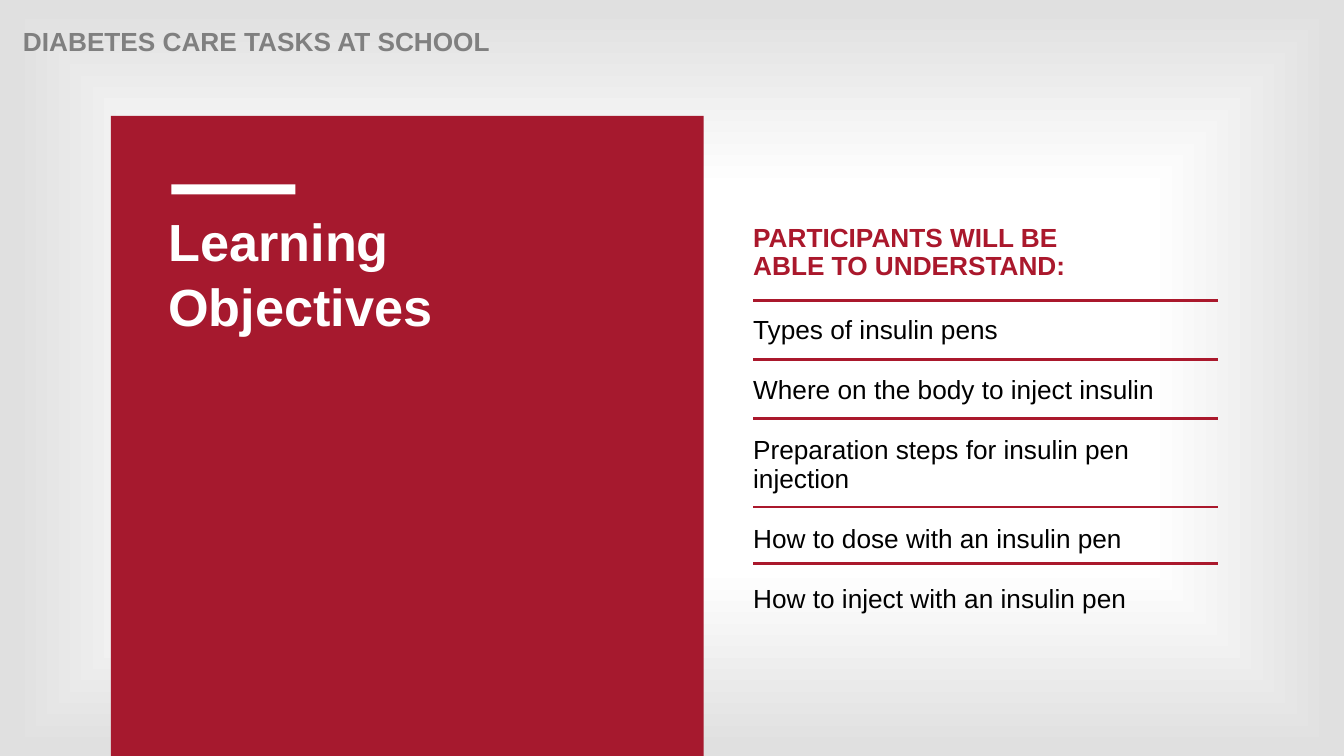
from lxml.etree import SubElement
from pptx import Presentation
from pptx.dml.color import RGBColor
from pptx.enum.shapes import MSO_CONNECTOR, MSO_SHAPE
from pptx.enum.text import MSO_ANCHOR, MSO_AUTO_SIZE, PP_ALIGN
from pptx.oxml.ns import qn
from pptx.util import Inches, Pt

CRIMSON = RGBColor(0xA6, 0x19, 0x2E)
RED = RGBColor(0xAA, 0x18, 0x2C)
GRAY = RGBColor(0x80, 0x80, 0x80)
WHITE = RGBColor(0xFF, 0xFF, 0xFF)
BLACK = RGBColor(0, 0, 0)
SILVER = RGBColor(0xE0, 0xE0, 0xE0)

BACKDROP_STOPS = [(12, WHITE), (50, WHITE), (98, SILVER)]
COURSE = "DIABETES CARE TASKS AT SCHOOL"
TITLE = "Learning Objectives"
LEAD_IN = "PARTICIPANTS WILL BE \nABLE TO UNDERSTAND:"
OBJECTIVES = [
    ("Types of insulin pens", 2.98),
    ("Where on the body to inject insulin", 3.57),
    ("Preparation steps for insulin pen injection", 4.15),
    ("How to dose with an insulin pen", 5.03),
    ("How to inject with an insulin pen", 5.59),
]
BLOCKS = [((1.1, 1.15, 5.88, 6.35), CRIMSON), ((1.7, 1.83, 1.23, 0.1), WHITE)]

LIST_LEFT, LIST_WIDTH = 7.47, 4.61
COURSE_FONT = {"name": "Arial", "size": Pt(18.7), "bold": True}
OBJECTIVE_FONT = {**COURSE_FONT, "bold": False}
TITLE_FONT = {**COURSE_FONT, "size": Pt(37.3)}
TIGHT = {"line_spacing": 0.9, "space_before": Pt(0)}
SPREAD = {**TIGHT, "space_before": Pt(1), "space_after": Pt(21.9)}
FLUSH = {f"margin_{side}": 0 for side in ("left", "top", "right", "bottom")}


def apply(target, values):
    """Set each named format value on the target."""
    for name, value in values.items():
        setattr(target, name, value)


def write(holder, lines, font, color, spacing, margins):
    """Fill a text holder with evenly formatted paragraphs."""
    frame = holder.text_frame
    apply(frame, {"word_wrap": True, "auto_size": MSO_AUTO_SIZE.NONE,
                  "vertical_anchor": MSO_ANCHOR.TOP, **margins})
    for index, line in enumerate(lines):
        paragraph = frame.add_paragraph() if index else frame.paragraphs[0]
        paragraph.text = line
        apply(paragraph, {"alignment": PP_ALIGN.LEFT, **spacing})
        for run in paragraph.runs:
            apply(run.font, font)
            run.font.color.rgb = color


def paint_backdrop(slide):
    """Give the slide a gradient that darkens toward its edges."""
    slide.background.fill.gradient()
    gradient = next(slide.element.iter(qn("a:gradFill")))
    for child in list(gradient):
        gradient.remove(child)
    stops = SubElement(gradient, qn("a:gsLst"))
    for percent, color in BACKDROP_STOPS:
        stop = SubElement(stops, qn("a:gs"), pos=str(percent * 1000))
        SubElement(stop, qn("a:srgbClr"), val=str(color))
    outline = SubElement(gradient, qn("a:path"), {"path": "shape"})
    SubElement(outline, qn("a:fillToRect"), dict.fromkeys("ltrb", "50000"))


def add_text(slide, box, *content):
    """Add a text box at the given place."""
    write(slide.shapes.add_textbox(*map(Inches, box)), *content)


def main():
    """Build the learning objectives slide."""
    deck = Presentation()
    apply(deck, {"slide_width": Inches(13.33), "slide_height": Inches(7.5)})
    slide = deck.slides.add_slide(deck.slide_layouts[5])
    shapes = slide.shapes
    paint_backdrop(slide)

    for box, color in BLOCKS:
        block = shapes.add_shape(MSO_SHAPE.RECTANGLE, *map(Inches, box))
        block.shadow.inherit = False
        block.fill.solid()
        block.fill.fore_color.rgb = color
        block.line.fill.background()

    add_text(slide, (0.13, 0.24, 11, 0.28), [COURSE], COURSE_FONT, GRAY, TIGHT, {})
    add_text(slide, (LIST_LEFT, 2.23, LIST_WIDTH, 0.6), [LEAD_IN],
             COURSE_FONT, RED, TIGHT, FLUSH)

    title = shapes.title
    apply(title, {"left": Inches(1.57), "top": Inches(2),
                  "width": Inches(4.87), "height": Inches(1.95)})
    write(title, [TITLE], TITLE_FONT, WHITE, {"line_spacing": 1.04}, {})
    title.element.getparent().append(title.element)

    add_text(slide, (LIST_LEFT, 3.14, LIST_WIDTH, 3.24),
             [objective for objective, _ in OBJECTIVES],
             OBJECTIVE_FONT, BLACK, SPREAD, FLUSH)
    for _, top in OBJECTIVES:
        ends = map(Inches, (LIST_LEFT, top, LIST_LEFT + LIST_WIDTH, top))
        rule = shapes.add_connector(MSO_CONNECTOR.STRAIGHT, *ends)
        rule.line.color.rgb = RED
        rule.line.width = Pt(2)
        SubElement(rule.element.spPr, qn("a:effectLst"))

    deck.save("out.pptx")


if __name__ == "__main__":
    main()
